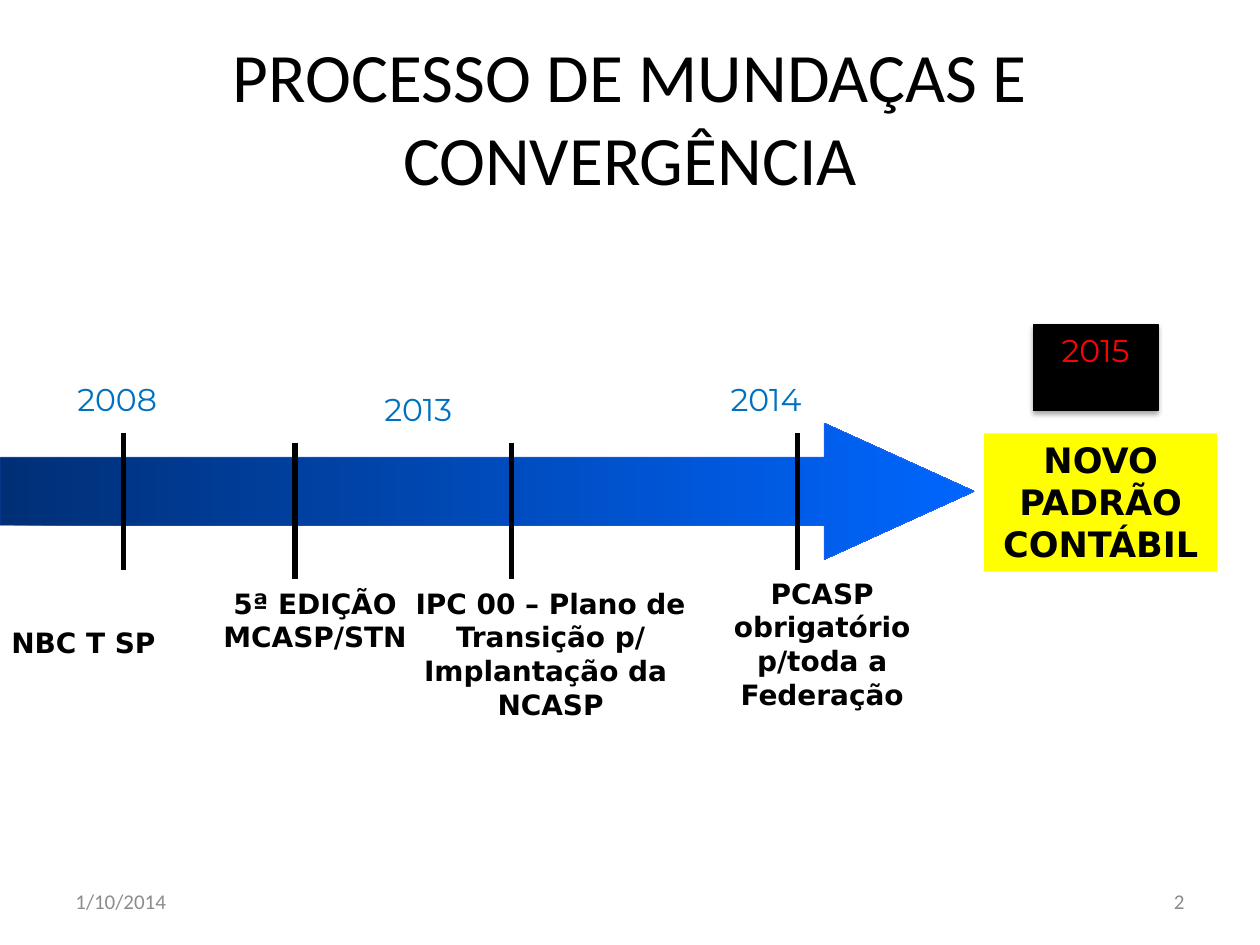
from dataclasses import dataclass

from lxml import etree
from pptx import Presentation
from pptx.dml.color import RGBColor
from pptx.enum.shapes import MSO_CONNECTOR, MSO_SHAPE
from pptx.enum.text import MSO_ANCHOR, MSO_AUTO_SIZE, PP_ALIGN
from pptx.oxml import parse_xml
from pptx.oxml.ns import nsdecls, qn
from pptx.util import Pt

RECT, ARROW = MSO_SHAPE.RECTANGLE, MSO_SHAPE.RIGHT_ARROW
STRAIGHT = MSO_CONNECTOR.STRAIGHT
TOP, MIDDLE = MSO_ANCHOR.TOP, MSO_ANCHOR.MIDDLE
LEFT, CENTER, RIGHT, JUSTIFY = (PP_ALIGN.LEFT, PP_ALIGN.CENTER,
                                PP_ALIGN.RIGHT, PP_ALIGN.JUSTIFY)
GROW = MSO_AUTO_SIZE.SHAPE_TO_FIT_TEXT


@dataclass(frozen=True)
class Theme:
    """Fonts, type sizes and colours of the slide."""
    heading: str = "Calibri"
    label: str = "DejaVu Sans"
    date: str = "Montserrat"
    title_size: float = 39.6
    result_size: float = 20
    year_size: float = 18
    event_size: float = 16
    footer_size: float = 12
    black: str = "000000"
    grey: str = "8C8C8C"
    year: str = "0070C0"
    target: str = "FF0000"
    outline: str = "EAEAEA"
    result: str = "FFFF00"
    dark: str = "002F76"
    bright: str = "0066FF"
    edge: str = "3366FF"


T = Theme()


def rgb(value):
    """Return the colour for a hex string."""
    return RGBColor.from_string(value)


def write(sp, text, font, size, color, align=CENTER, anchor=TOP, bold=False, wrap=True):
    """Fill a shape with text in one style and return its runs."""
    tf = sp.text_frame
    tf.text = text
    tf.word_wrap = wrap
    tf.vertical_anchor = anchor
    for p in tf.paragraphs:
        p.alignment = align
        for r in p.runs:
            r.font.name, r.font.size, r.font.bold = font, Pt(size), bold
            r.font.color.rgb = rgb(color)
    return [r for p in tf.paragraphs for r in p.runs]


def textbox(slide, box):
    """Add an empty text box."""
    return slide.shapes.add_textbox(*map(Pt, box))


def shape(slide, kind, box):
    """Add a preset shape without a shadow."""
    sp = slide.shapes.add_shape(kind, *map(Pt, box))
    sp.shadow.inherit = False
    return sp


def fit_label(sp):
    """Give a label narrow margins and let it grow with its text."""
    tf = sp.text_frame
    tf.margin_left = tf.margin_right = Pt(6.5)
    tf.margin_top = tf.margin_bottom = Pt(3.1)
    tf.auto_size = GROW


def add_title(slide, box, text):
    """Place the title placeholder."""
    sp = slide.shapes.title
    sp.left, sp.top, sp.width, sp.height = map(Pt, box)
    write(sp, text, T.heading, T.title_size, T.black, anchor=MIDDLE)


def add_footer(slide, box, date, number):
    """Place the date and slide number at the two ends of the box."""
    x, y, w, h = box
    part = 168
    for left, text, align in ((x, date, LEFT), (x + w - part, number, RIGHT)):
        write(textbox(slide, (left, y, part, h)), text, T.heading,
              T.footer_size, T.grey, align, MIDDLE)


def add_arrow(slide, box):
    """Draw the gradient arrow of the timeline."""
    sp = shape(slide, ARROW, box)
    sp.adjustments[0], sp.adjustments[1] = 0.5, 1.1
    sp.fill.gradient()
    sp.fill.gradient_angle = 0
    for stop, color, pos in zip(sp.fill.gradient_stops, (T.dark, T.bright), (0, 1)):
        stop.color.rgb, stop.position = rgb(color), pos
    sp.line.color.rgb, sp.line.width = rgb(T.edge), Pt(0.25)


def add_tick(slide, x, y, length):
    """Draw one vertical mark across the arrow."""
    c = slide.shapes.add_connector(STRAIGHT, Pt(x), Pt(y), Pt(x), Pt(y + length))
    c.line.color.rgb, c.line.width = rgb(T.black), Pt(3)
    etree.SubElement(c._element.spPr, qn("a:effectLst"))


def write_year(sp, text, color):
    """Write a year on one line with thin outlined digits."""
    tf = sp.text_frame
    tf.margin_left = tf.margin_right = Pt(0)
    for r in write(sp, text, T.date, T.year_size, color, wrap=False):
        r.font._element.insert(0, parse_xml(
            f'<a:ln {nsdecls("a")} w="{Pt(1)}"><a:solidFill>'
            f'<a:srgbClr val="{T.outline}"/></a:solidFill></a:ln>'))


def add_timeline(slide, box):
    """Place arrow, marks, years and events within the box."""
    x, y, w, h = box
    add_arrow(slide, (x, y + 28.2, w, 78))
    for dx, dy in ((70.6, 34), (168.6, 39.5), (292.5, 39.5), (455.8, 34)):
        add_tick(slide, x + dx, y + dy, 78)
    for text, dx, dy, width in (("2008", 39.6, 0, 54.7), ("2013", 152, 5.6, 174),
                                ("2014", 410.4, 0, 54.7)):
        write_year(textbox(slide, (x + dx, y + dy, width, 32.4)), text, T.year)
    events = (
        ("NBC T SP", 0, 140.6, 119, 26, JUSTIFY),
        ("5ª EDIÇÃO MCASP/STN", 95.8, 118.4, 168.5, 46, CENTER),
        ("IPC 00 – Plano de Transição p/ Implantação da \nNCASP",
         230.4, 118.4, 168.5, 84, CENTER),
        ("PCASP obrigatório p/toda a Federação", 399.6, 112.6, 140.4, 84, CENTER))
    for text, dx, dy, width, height, align in events:
        sp = textbox(slide, (x + dx, y + dy, width, height))
        write(sp, text, T.label, T.event_size, T.black, align, bold=True)
        fit_label(sp)


def add_result(slide, box, year, text):
    """Place the target year above the highlighted result."""
    x, y, w, h = box
    sp = shape(slide, RECT, (x + 28, y, 71.3, 49))
    sp.fill.solid()
    sp.fill.fore_color.rgb = sp.line.color.rgb = rgb(T.black)
    sp.line.width = Pt(0.75)
    effects = sp._element.spPr.find(qn("a:effectLst"))
    effects.append(parse_xml(
        f'<a:outerShdw {nsdecls("a")} blurRad="{Pt(3.1)}" dist="{Pt(1.8)}" '
        f'dir="5400000" rotWithShape="0"><a:srgbClr val="{T.black}">'
        '<a:alpha val="35000"/></a:srgbClr></a:outerShdw>'))
    write_year(sp, year, T.target)
    sp = shape(slide, RECT, (x, y + 62, w, h - 62))
    sp.fill.solid()
    sp.fill.fore_color.rgb = rgb(T.result)
    sp.line.fill.background()
    write(sp, text, T.label, T.result_size, T.black, bold=True)
    fit_label(sp)


def main():
    """Build and save the slide."""
    prs = Presentation()
    prs.slide_width, prs.slide_height = Pt(720), Pt(540)
    slide = prs.slides.add_slide(prs.slide_layouts[5])
    add_title(slide, (36, 21.6, 648, 90), "PROCESSO DE MUNDAÇAS E CONVERGÊNCIA")
    add_footer(slide, (36, 500.5, 648, 28.8), "1/10/2014", "2")
    add_timeline(slide, (0, 213.6, 556.8, 202))
    add_result(slide, (562.4, 185.6, 133.2, 141), "2015", "NOVO PADRÃO\nCONTÁBIL")
    prs.save("out.pptx")


if __name__ == "__main__":
    main()
